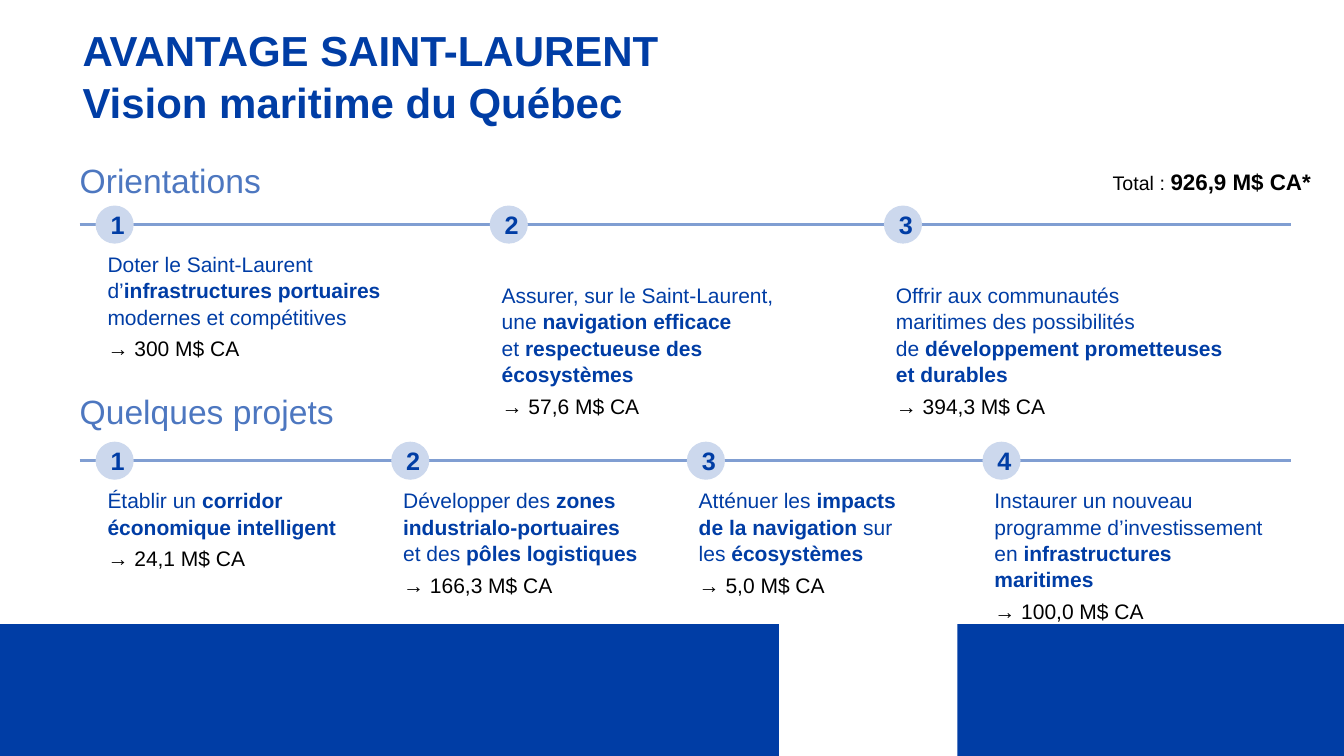
"""Build the slide on the maritime vision, its orientations and projects."""
from dataclasses import dataclass

from lxml.etree import SubElement as Sub
from pptx import Presentation
from pptx.dml.color import RGBColor as Rgb
from pptx.enum.shapes import MSO_CONNECTOR as Link, MSO_SHAPE as Form
from pptx.enum.text import MSO_ANCHOR as Anchor, MSO_AUTO_SIZE as Fit, PP_ALIGN as Align
from pptx.oxml.ns import qn
from pptx.util import Cm, Pt


@dataclass(frozen=True)
class Theme:
    """Colours, font and type sizes of the slide."""
    face: str = "Arial"
    blue: str = "003DA5"
    soft: str = "4D77C0"
    rule: str = "809ED2"
    pale: str = "CCD8ED"
    ink: str = "000000"
    title: int = 30
    head: int = 24
    chip: int = 18
    total: int = 16
    label: int = 14
    body: int = 15


LOOK = Theme()
LEFT, END, SPAN, CHIP = 2.01, 32.54, 29.8, 0.96
TEXT = 2.71

AIMS = [
    ("Doter le Saint-Laurent\nd’|infrastructures portuaires|\nmodernes et compétitives", "300 M$ CA"),
    ("Assurer, sur le Saint-Laurent,\nune |navigation efficace|\net |respectueuse des\nécosystèmes|",
     "57,6 M$ CA"),
    ("Offrir aux communautés\nmaritimes des possibilités\nde |développement prometteuses\net durables|",
     "394,3 M$ CA"),
]
PLANS = [
    ("Établir un |corridor\néconomique intelligent|", "24,1 M$ CA"),
    ("Développer des |zones\nindustrialo-portuaires|\net des |pôles logistiques|", "166,3 M$ CA"),
    ("Atténuer les |impacts\nde la navigation| sur\nles |écosystèmes|", "5,0 M$ CA"),
    ("Instaurer un nouveau\nprogramme d’investissement\nen |infrastructures\nmaritimes|", "100,0 M$ CA"),
]


def put(item, **vals):
    """Set each named value on the item."""
    for name, val in vals.items():
        setattr(item, name, val)


def place(shape, left, top, wide, high):
    """Move and size a shape, in centimetres."""
    put(shape, left=Cm(left), top=Cm(top), width=Cm(wide), height=Cm(high))


def setup(shape, anchor=Anchor.TOP, inset=0, wrap=True):
    """Give the text frame its margins and return it."""
    frame = shape.text_frame
    put(frame, margin_left=Cm(inset), margin_right=0, margin_top=0, margin_bottom=0,
        word_wrap=wrap, auto_size=Fit.NONE, vertical_anchor=anchor)
    return frame


def rich(par, text, size, tint, big=None, bold=False, after=0, lead=1.0, align=Align.LEFT):
    """Write text in which bars switch bold on and off."""
    props = par._p.get_or_add_pPr()
    props.set("marL", "0")
    props.set("indent", "0")
    Sub(props, qn("a:buNone"))
    put(par, alignment=align, space_before=Pt(0), space_after=Pt(after), line_spacing=lead)
    for part, chunk in enumerate(text.split("|")):
        heavy = bold or part % 2 == 1
        points = big if big and heavy else size
        for row, line in enumerate(chunk.split("\n")):
            if row:
                par.add_line_break()
                Sub(par._p[-1], qn("a:rPr"), sz=str(points * 100))
            if line:
                run = par.add_run()
                run.text = line
                put(run.font, name=LOOK.face, size=Pt(points), bold=heavy)
                run.font.color.rgb = Rgb.from_string(tint)


def shade(slide, form, tint, *spot):
    """Add a plain filled shape."""
    shape = slide.shapes.add_shape(form, *map(Cm, spot))
    shape.shadow.inherit = False
    shape.fill.solid()
    shape.fill.fore_color.rgb = Rgb.from_string(tint)
    shape.line.fill.background()
    return shape


def note(slide, spot, text, size, tint, big=None):
    """Add a one-line text box."""
    box = slide.shapes.add_textbox(*map(Cm, spot))
    rich(setup(box).paragraphs[0], text, size, tint, big)


def rail(slide, top):
    """Draw the line that carries the numbers."""
    line = slide.shapes.add_connector(Link.STRAIGHT, Cm(LEFT), Cm(top), Cm(END), Cm(top))
    line.line.width = Pt(2)
    line.line.color.rgb = Rgb.from_string(LOOK.rule)
    Sub(line._element.spPr, qn("a:effectLst"))


def chip(slide, left, mid, num):
    """Add a numbered disc."""
    disc = shade(slide, Form.OVAL, LOOK.pale, left, mid - CHIP / 2, CHIP, CHIP)
    frame = setup(disc, Anchor.MIDDLE, 0.15, False)
    rich(frame.paragraphs[0], str(num), LOOK.chip, LOOK.blue, bold=True, align=Align.CENTER)


def block(shape, spot, text, cost):
    """Fill a box with a goal and its cost."""
    place(shape, *spot)
    frame = setup(shape)
    rich(frame.paragraphs[0], text, LOOK.body, LOOK.blue, after=4, lead=1.04)
    rich(frame.add_paragraph(), f"→ {cost}", LOOK.body, LOOK.ink, after=4, lead=1.04)


def band(slide, holds, head, top, mid, rows, tops):
    """Lay out a heading, its line and evenly spaced goals."""
    note(slide, (LEFT, top, 9.6, 1.02), head, LOOK.head, LOOK.soft)
    rail(slide, mid)
    step = SPAN / len(rows)
    for num, ((text, cost), high) in enumerate(zip(rows, tops)):
        left = TEXT + num * step
        chip(slide, left - 0.3, mid, num + 1)
        shape = next(holds, None) or slide.shapes.add_textbox(0, 0, 0, 0)
        block(shape, (left, high, step - 0.1, 3.1), text, cost)


def main():
    """Build and save the slide."""
    deck = Presentation()
    put(deck, slide_width=Cm(33.87), slide_height=Cm(19.05))
    slide = deck.slides.add_slide(deck.slide_layouts[4])
    title = slide.shapes.title
    holds = iter([hold for hold in slide.placeholders if hold.placeholder_format.idx])
    for left, wide in ((24.13, 9.74), (0, 19.63)):
        shade(slide, Form.RECTANGLE, LOOK.blue, left, 15.73, wide, 3.32)
    place(title, 2.08, 0.53, 28.4, 2.67)
    rich(setup(title, Anchor.BOTTOM).paragraphs[0], "AVANTAGE SAINT-LAURENT\nVision maritime du Québec",
         LOOK.title, LOOK.blue, bold=True, lead=1.04)
    band(slide, holds, "Orientations", 4.04, 5.66, AIMS, (6.32, 7.1, 7.1))
    note(slide, (28.04, 4.24, 5.7, 0.7), "Total : |926,9 M$ CA*|", LOOK.label, LOOK.ink, LOOK.total)
    band(slide, holds, "Quelques projets", 9.86, 11.61, PLANS, [12.27] * len(PLANS))
    deck.save("out.pptx")


if __name__ == "__main__":
    main()
